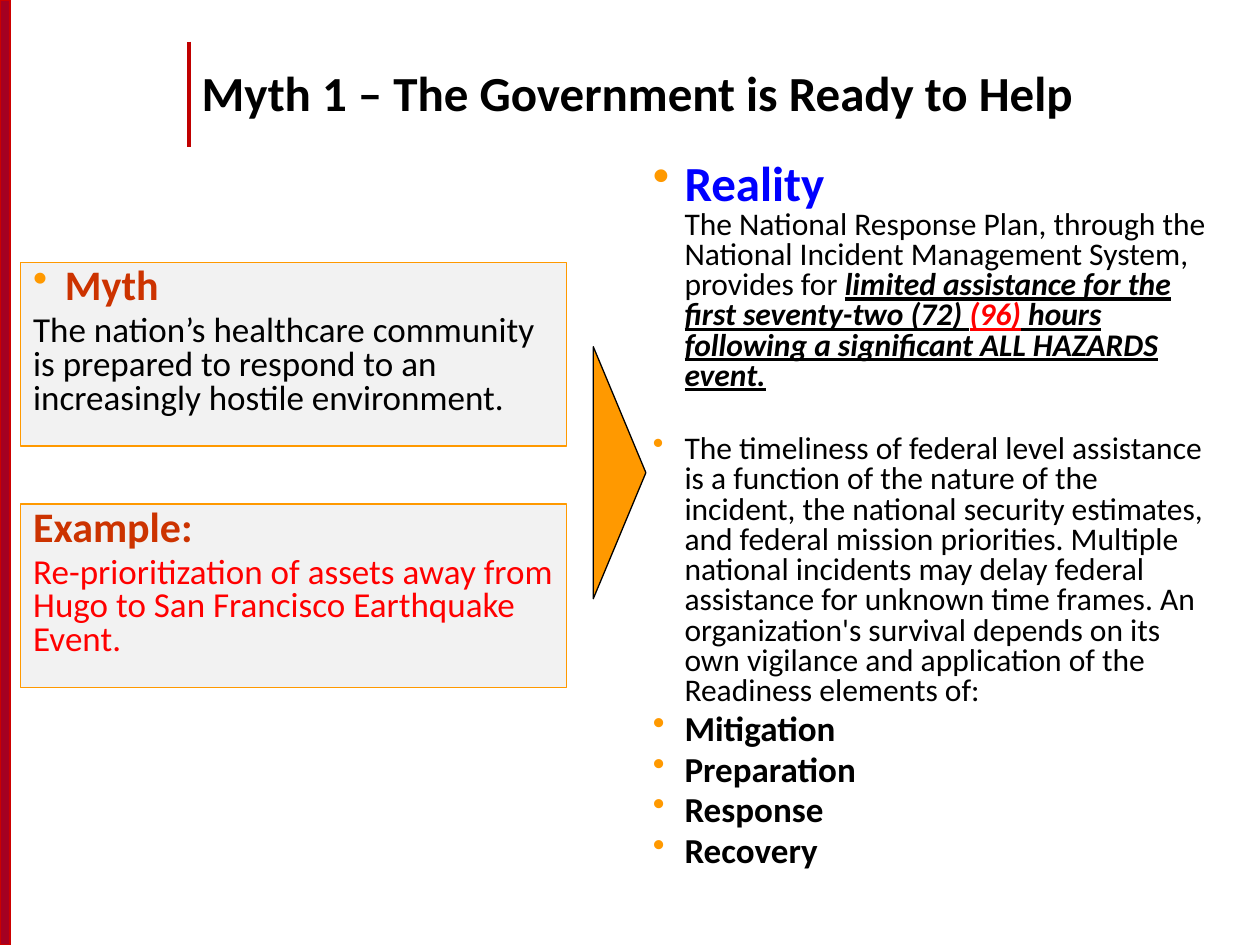
from dataclasses import dataclass

from lxml.etree import SubElement
from pptx import Presentation
from pptx.dml.color import RGBColor
from pptx.enum.shapes import MSO_CONNECTOR as Connector, MSO_SHAPE as Shape
from pptx.enum.text import MSO_ANCHOR as Anchor, MSO_AUTO_SIZE as AutoSize, PP_ALIGN as Align
from pptx.oxml.ns import qn
from pptx.util import Cm, Pt


@dataclass(frozen=True)
class Theme:
    font: str = "Calibri"
    black: str = "000000"
    red: str = "FF0000"
    blue: str = "0000FF"
    rust: str = "CC3300"
    orange: str = "FF9900"
    card: str = "F2F2F2"
    bar: str = "A50021"
    bar_edge: str = "CC0000"
    rule: str = "C00000"
    title: int = 28
    heading: int = 24
    body: int = 20
    small: int = 18


THEME = Theme()


@dataclass(frozen=True)
class Span:
    text: str
    size: int = THEME.small
    color: str = THEME.black
    bold: bool = False
    stressed: bool = False
    break_after: bool = False


@dataclass(frozen=True)
class Para:
    spans: tuple[Span, ...]
    bullet: bool = False
    before: float = 4
    spacing: float = 0.8


@dataclass(frozen=True)
class Area:
    left: float
    top: float
    width: float
    height: float

    def lengths(self) -> tuple[Cm, ...]:
        """Return left, top, width and height as lengths."""
        return Cm(self.left), Cm(self.top), Cm(self.width), Cm(self.height)


@dataclass(frozen=True)
class Card:
    top: float
    paras: tuple[Para, ...]


def rgb(color: str) -> RGBColor:
    """Turn a hex string into a colour."""
    return RGBColor.from_string(color)


def add_bullet(paragraph) -> None:
    """Give a paragraph a hanging orange bullet."""
    properties = paragraph._p.get_or_add_pPr()
    properties.set("marL", str(Cm(0.64)))
    properties.set("indent", str(-Cm(0.64)))
    color = SubElement(properties, qn("a:buClr"))
    SubElement(color, qn("a:srgbClr")).set("val", THEME.orange)
    SubElement(properties, qn("a:buChar")).set("char", "•")


def write(frame, paras: tuple[Para, ...], anchor: Anchor = Anchor.TOP) -> None:
    """Fill a text frame with formatted paragraphs."""
    frame.word_wrap = True
    frame.auto_size = AutoSize.NONE
    frame.vertical_anchor = anchor
    for index, para in enumerate(paras):
        paragraph = frame.add_paragraph() if index else frame.paragraphs[0]
        if para.bullet:
            add_bullet(paragraph)
        paragraph.alignment = Align.LEFT
        paragraph.line_spacing = para.spacing
        paragraph.space_before = Pt(para.before if index else 0)
        for span in para.spans:
            run = paragraph.add_run()
            run.text = span.text
            font = run.font
            font.name, font.size = THEME.font, Pt(span.size)
            font.color.rgb = rgb(span.color)
            font.bold = span.bold or span.stressed
            font.italic = font.underline = span.stressed
            if span.break_after:
                paragraph.add_line_break()


def add_filled(page, kind: Shape, area: Area, fill: str, line: str, weight: float):
    """Draw a filled, outlined preset shape."""
    shape = page.shapes.add_shape(kind, *area.lengths())
    shape.shadow.inherit = False
    shape.fill.solid()
    shape.fill.fore_color.rgb = rgb(fill)
    shape.line.color.rgb = rgb(line)
    shape.line.width = Pt(weight)
    return shape


def add_rule(page, x: float, top: float, bottom: float) -> None:
    """Draw the vertical rule beside the title."""
    rule = page.shapes.add_connector(Connector.STRAIGHT, Cm(x), Cm(top), Cm(x), Cm(bottom))
    rule.line.color.rgb = rgb(THEME.rule)
    rule.line.width = Pt(2.25)
    SubElement(rule._element.spPr, qn("a:effectLst"))


def add_card(page, card: Card) -> None:
    """Draw one grey text card in the left column."""
    area = Area(0.42, card.top, 11, 3.7)
    shape = add_filled(page, Shape.RECTANGLE, area, THEME.card, THEME.orange, 0.75)
    write(shape.text_frame, card.paras)


TITLE = Para((Span("Myth 1 – The Government is Ready to Help", THEME.title, bold=True),), spacing=0.85)

CARDS = (
    Card(5.29, (
        Para((Span("Myth", THEME.heading, THEME.rust, bold=True),), bullet=True),
        Para((Span("The nation’s healthcare community is prepared to respond to an "
                   "increasingly hostile environment.", THEME.body),)),
    )),
    Card(10.16, (
        Para((Span("Example:", THEME.heading, THEME.rust, bold=True),)),
        Para((Span("Re-prioritization of assets away from Hugo to San Francisco "
                   "Earthquake Event.", THEME.body, THEME.red),)),
    )),
)

REALITY = (
    Para((
        Span("Reality", THEME.title, THEME.blue, bold=True, break_after=True),
        Span("The National Response Plan, through the National Incident Management "
             "System, provides for "),
        Span("limited assistance for the first seventy-two (72) ", stressed=True),
        Span("(96)", color=THEME.red, stressed=True),
        Span(" hours following a significant ALL HAZARDS event.", stressed=True),
    ), bullet=True),
    Para((
        Span("The timeliness of federal level assistance is a function of the nature of "
             "the incident, the national security estimates, and federal mission "
             "priorities. Multiple national incidents may delay federal assistance for "
             "unknown time frames. An organization's survival depends on its own "
             "vigilance and application of the Readiness elements of:"),
    ), bullet=True, before=24.5),
    *(Para((Span(element, THEME.body, bold=True),), bullet=True)
      for element in ("Mitigation", "Preparation", "Response", "Recovery")),
)


def main() -> None:
    """Build the slide and save the deck."""
    deck = Presentation()
    deck.slide_width, deck.slide_height = Cm(25.4), Cm(19.05)
    page = deck.slides.add_slide(deck.slide_layouts[5])

    add_filled(page, Shape.RECTANGLE, Area(0, 0, 0.21, 19.05), THEME.bar, THEME.bar_edge, 1)
    add_rule(page, 3.81, 0.84, 2.97)

    title = page.shapes.title
    title.left, title.top, title.width, title.height = Area(3.81, 0.64, 20.96, 2.62).lengths()
    write(title.text_frame, (TITLE,), Anchor.MIDDLE)

    for card in CARDS:
        add_card(page, card)

    reality = page.shapes.add_textbox(*Area(12.91, 3.18, 11.85, 13.34).lengths())
    write(reality.text_frame, REALITY)

    arrow = add_filled(page, Shape.ISOSCELES_TRIANGLE, Area(9.95, 9, 5.08, 1.06),
                       THEME.orange, THEME.black, 0.75)
    arrow.rotation = 90

    deck.save("out.pptx")


if __name__ == "__main__":
    main()
